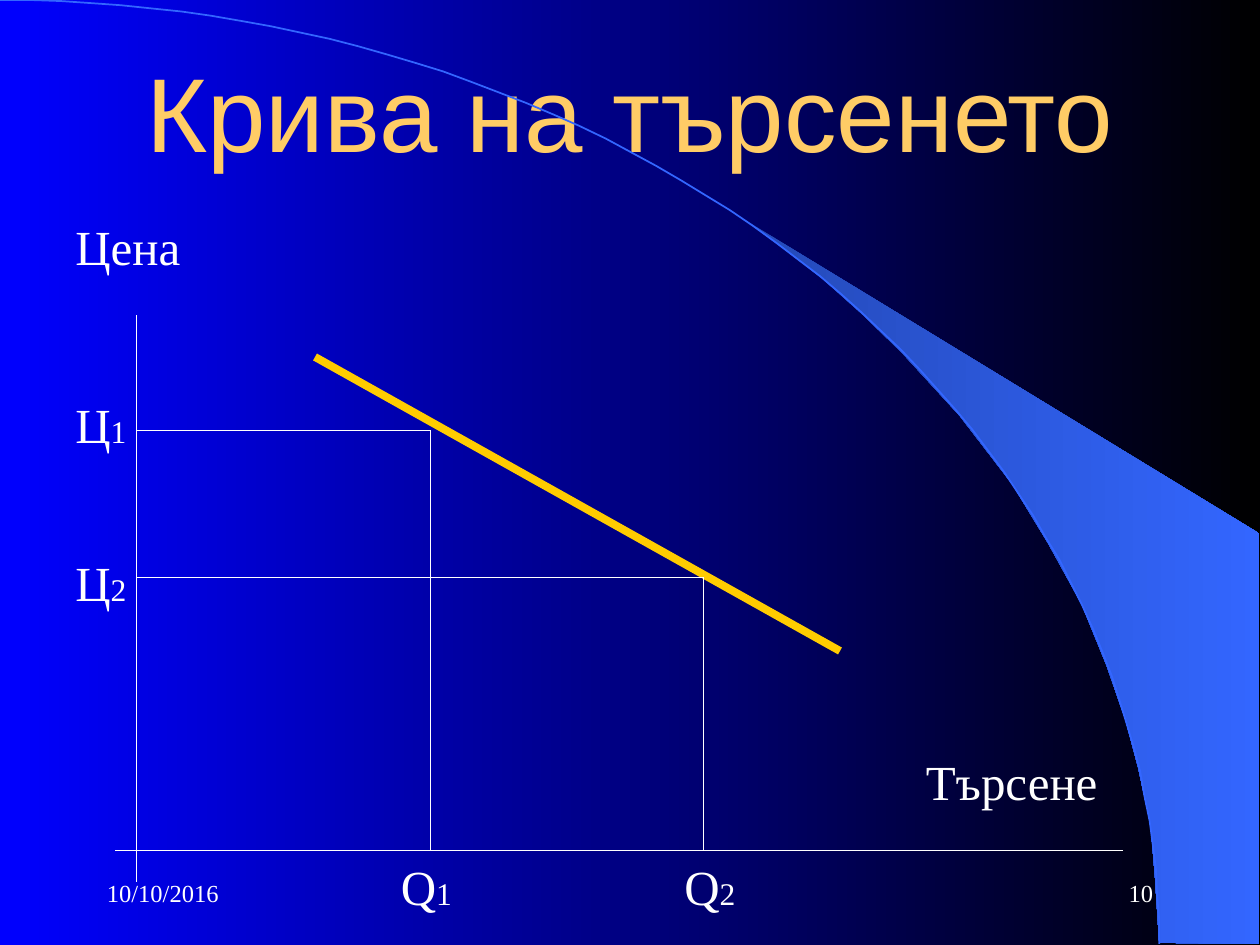
import math
from dataclasses import dataclass

from lxml import etree
from pptx import Presentation
from pptx.dml.color import RGBColor
from pptx.enum import shapes, text
from pptx.oxml import ns
from pptx.util import Pt

PX = 7620
BLUE = RGBColor(0x00, 0x00, 0xFF)
BLACK = RGBColor(0x00, 0x00, 0x00)
DEEP_BLUE = RGBColor(0x24, 0x49, 0xB6)
SKY_BLUE = RGBColor(0x33, 0x66, 0xFF)
WHITE = RGBColor(0xFF, 0xFF, 0xFF)
GOLD = RGBColor(0xFF, 0xCC, 0x00)
SAND = RGBColor(0xFF, 0xCC, 0x66)
SERIF, SANS = "Times New Roman", "Arial"


@dataclass(frozen=True)
class Label:
    left: int
    top: int
    width: int
    words: str
    index: str = ""


@dataclass(frozen=True)
class Footer:
    left: int
    words: str
    align: text.PP_ALIGN


@dataclass(frozen=True)
class Segment:
    x1: int
    y1: int
    x2: int
    y2: int
    color: RGBColor = WHITE
    weight: float = 0.75


def add_run(paragraph, words: str, size: int, font: str = SERIF, color: RGBColor = WHITE) -> None:
    run = paragraph.add_run()
    run.text = words
    run.font.size = Pt(size)
    run.font.name = font
    run.font.color.rgb = color


def set_gradient(fill, start: RGBColor, end: RGBColor) -> None:
    fill.gradient()
    fill.gradient_angle = 0
    for stop, color in zip(fill.gradient_stops, (start, end)):
        stop.color.rgb = color


def draw_outline(slide, points: list, close: bool):
    builder = slide.shapes.build_freeform(*points[0], scale=PX)
    builder.add_line_segments(points[1:], close=close)
    outline = builder.convert_to_shape()
    outline.shadow.inherit = False
    return outline


def draw_segment(slide, segment: Segment) -> None:
    line = slide.shapes.add_connector(
        shapes.MSO_CONNECTOR.STRAIGHT,
        segment.x1 * PX, segment.y1 * PX, segment.x2 * PX, segment.y2 * PX,
    )
    line.line.color.rgb = segment.color
    line.line.width = Pt(segment.weight)
    etree.SubElement(line._element.spPr, ns.qn("a:effectLst"))


def draw_label(slide, label: Label) -> None:
    box = slide.shapes.add_textbox(label.left * PX, label.top * PX, label.width * PX, 68 * PX)
    frame = box.text_frame
    frame.word_wrap = True
    frame.auto_size = text.MSO_AUTO_SIZE.SHAPE_TO_FIT_TEXT
    add_run(frame.paragraphs[0], label.words, 28)
    if label.index:
        add_run(frame.paragraphs[0], label.index, 18)


def draw_footer(slide, footer: Footer) -> None:
    frame = slide.shapes.add_textbox(footer.left * PX, 820 * PX, 250 * PX, 60 * PX).text_frame
    frame.word_wrap = True
    frame.vertical_anchor = text.MSO_ANCHOR.MIDDLE
    frame.paragraphs[0].alignment = footer.align
    add_run(frame.paragraphs[0], footer.words, 14)


def draw_title(slide, words: str) -> None:
    title = slide.shapes.title
    title.left, title.top, title.width, title.height = 90 * PX, 30 * PX, 1020 * PX, 150 * PX
    frame = title.text_frame
    frame.word_wrap = True
    frame.auto_size = text.MSO_AUTO_SIZE.NONE
    frame.vertical_anchor = text.MSO_ANCHOR.MIDDLE
    frame.paragraphs[0].alignment = text.PP_ALIGN.CENTER
    add_run(frame.paragraphs[0], words, 60, SANS, SAND)


def draw_backdrop(slide) -> None:
    set_gradient(slide.background.fill, BLUE, BLACK)
    beam = draw_outline(slide, BEAM, True)
    set_gradient(beam.fill, DEEP_BLUE, SKY_BLUE)
    beam.line.fill.background()
    angles = [math.radians(step * 1.5) for step in range(61)]
    horizon_points = [
        (round(1104 * math.sin(angle)), round(899 * (1 - math.cos(angle)))) for angle in angles
    ]
    horizon = draw_outline(slide, horizon_points, False)
    horizon.fill.background()
    horizon.line.color.rgb = SKY_BLUE
    horizon.line.width = Pt(1)


BEAM = [
    (1104, 898), (1199, 899), (1199, 508), (707, 208), (749, 239), (784, 266),
    (822, 300), (859, 336), (914, 396), (964, 461), (998, 517), (1030, 575),
    (1054, 634), (1072, 686), (1084, 731), (1096, 787), (1100, 835),
]
PRICE_AXIS, DEMAND_AXIS = 130, 810
EQUILIBRIA = [(410, 410), (670, 550)]
AXES_AND_DEMAND = [
    Segment(PRICE_AXIS, 300, PRICE_AXIS, 840),
    Segment(110, DEMAND_AXIS, 1070, DEMAND_AXIS),
    Segment(300, 340, 800, 620, GOLD, 4.5),
]
GUIDES = [
    guide
    for quantity, price in EQUILIBRIA
    for guide in (
        Segment(PRICE_AXIS, price, quantity, price),
        Segment(quantity, price, quantity, DEMAND_AXIS),
    )
]
LABELS = [
    Label(870, 710, 260, "Търсене"),
    Label(60, 200, 240, "Цена"),
    Label(60, 370, 80, "Ц", "1"),
    Label(60, 520, 80, "Ц", "2"),
    Label(370, DEMAND_AXIS, 90, "Q", "1"),
    Label(640, DEMAND_AXIS, 90, "Q", "2"),
]
FOOTERS = [
    Footer(90, "10/10/2016", text.PP_ALIGN.LEFT),
    Footer(860, "10", text.PP_ALIGN.RIGHT),
]


def main() -> None:
    deck = Presentation()
    deck.slide_width, deck.slide_height = 1200 * PX, 900 * PX
    slide = deck.slides.add_slide(deck.slide_layouts[5])
    draw_backdrop(slide)
    for footer in FOOTERS:
        draw_footer(slide, footer)
    draw_title(slide, "Крива на търсенето")
    for segment in AXES_AND_DEMAND + GUIDES:
        draw_segment(slide, segment)
    for label in LABELS:
        draw_label(slide, label)
    deck.save("out.pptx")


if __name__ == "__main__":
    main()
